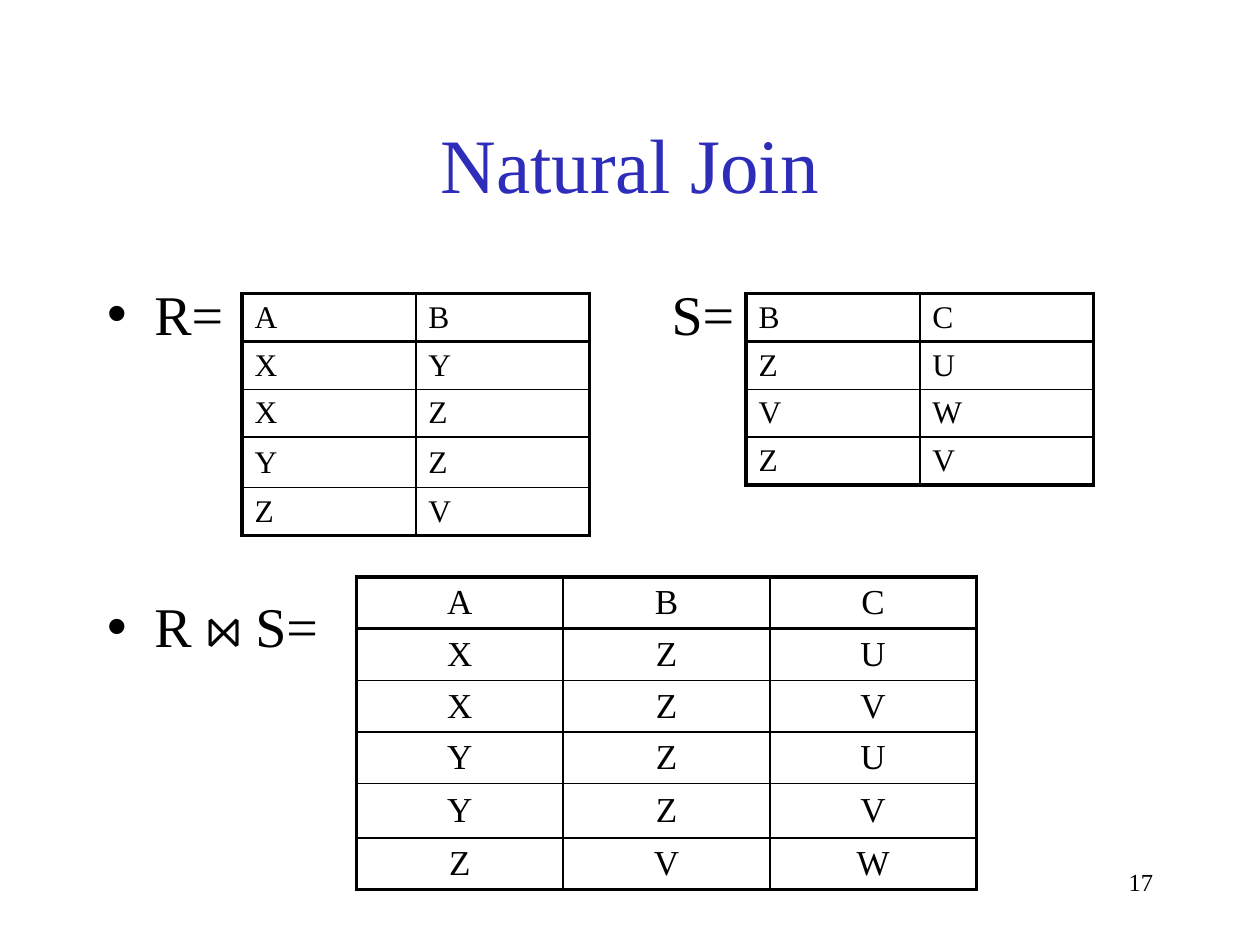
"""Build the Natural Join slide with two input relations and their join."""
from dataclasses import dataclass

from lxml.etree import SubElement
from pptx import Presentation
from pptx.dml.color import RGBColor
from pptx.enum.text import MSO_ANCHOR, MSO_AUTO_SIZE, PP_ALIGN
from pptx.oxml import parse_xml
from pptx.oxml.ns import nsdecls, qn
from pptx.util import Inches, Pt

FONT = "Times New Roman"
BLACK = RGBColor(0x00, 0x00, 0x00)
BLUE = RGBColor(0x2D, 0x2D, 0xB9)
THICK, THIN = Pt(2.25), Pt(1)


@dataclass
class Relation:
    left: float
    top: float
    col_width: float
    row_heights: list[float]
    rows: list[str]
    size: int
    align: PP_ALIGN


RELATIONS = [
    Relation(1.92, 2.33, 1.38, [0.38, 0.38, 0.38, 0.4, 0.38],
             ["AB", "XY", "XZ", "YZ", "ZV"], 18, PP_ALIGN.LEFT),
    Relation(5.92, 2.33, 1.38, [0.38] * 4,
             ["BC", "ZU", "VW", "ZV"], 18, PP_ALIGN.LEFT),
    Relation(2.83, 4.58, 1.64, [0.41, 0.41, 0.41, 0.41, 0.43, 0.41],
             ["ABC", "XZU", "XZV", "YZU", "YZV", "ZVW"], 20, PP_ALIGN.CENTER),
]


def format_paragraph(p, size: int, color: RGBColor, align: PP_ALIGN) -> None:
    p.alignment = align
    for r in p.runs:
        r.font.name = FONT
        r.font.size = Pt(size)
        r.font.color.rgb = color


def place(sp, left: float, top: float, width: float, height: float) -> None:
    sp.left, sp.top = Inches(left), Inches(top)
    sp.width, sp.height = Inches(width), Inches(height)


def set_borders(cell, widths: dict[str, int]) -> None:
    tc_pr = cell._tc.get_or_add_tcPr()
    for i, (side, width) in enumerate(widths.items()):
        tc_pr.insert(i, parse_xml(
            f'<a:ln{side} {nsdecls("a")} w="{width}"><a:solidFill>'
            f'<a:srgbClr val="{BLACK}"/></a:solidFill></a:ln{side}>'))


def add_relation(s, rel: Relation) -> None:
    n_rows, n_cols = len(rel.rows), len(rel.rows[0])
    table = s.shapes.add_table(
        n_rows, n_cols, Inches(rel.left), Inches(rel.top),
        Inches(rel.col_width * n_cols), Inches(sum(rel.row_heights))).table
    table.first_row = table.horz_banding = False
    for col in table.columns:
        col.width = Inches(rel.col_width)
    for i, (values, height) in enumerate(zip(rel.rows, rel.row_heights)):
        table.rows[i].height = Inches(height)
        for j, value in enumerate(values):
            cell = table.cell(i, j)
            cell.text = value
            cell.vertical_anchor = MSO_ANCHOR.MIDDLE
            cell.margin_top = cell.margin_bottom = Inches(0.04)
            cell.fill.background()
            format_paragraph(cell.text_frame.paragraphs[0], rel.size, BLACK, rel.align)
            set_borders(cell, {
                "L": THICK if j == 0 else THIN,
                "R": THICK if j == n_cols - 1 else THIN,
                "T": THICK if i <= 1 else THIN,
                "B": THICK if i in (0, n_rows - 1) else THIN,
            })


def add_body(sp) -> None:
    place(sp, 0.75, 2.17, 8.5, 4.5)
    tf = sp.text_frame
    tf.text = "R=\tS=\nR ⋈ S="
    tf.auto_size = MSO_AUTO_SIZE.NONE
    first, second = tf.paragraphs
    tabs = SubElement(first._p.get_or_add_pPr(), qn("a:tabLst"))
    SubElement(tabs, qn("a:tab"), pos=str(Inches(4.48)), algn="l")
    first.space_before = Pt(0)
    second.space_before = Pt(140)
    for p in tf.paragraphs:
        format_paragraph(p, 32, BLACK, PP_ALIGN.LEFT)


def main() -> None:
    prs = Presentation()
    prs.slide_width, prs.slide_height = Inches(10), Inches(7.5)
    s = prs.slides.add_slide(prs.slide_layouts[1])

    title, body = s.placeholders
    place(title, 0.75, 0.67, 8.5, 1.25)
    title.text_frame.text = "Natural Join"
    title.text_frame.vertical_anchor = MSO_ANCHOR.MIDDLE
    format_paragraph(title.text_frame.paragraphs[0], 44, BLUE, PP_ALIGN.CENTER)
    add_body(body)

    for rel in RELATIONS:
        add_relation(s, rel)

    number = s.shapes.add_textbox(Inches(7.17), Inches(6.83), Inches(2.08), Inches(0.5))
    tf = number.text_frame
    tf.word_wrap = True
    tf.text = "17"
    format_paragraph(tf.paragraphs[0], 14, BLACK, PP_ALIGN.RIGHT)

    prs.save("out.pptx")


if __name__ == "__main__":
    main()
